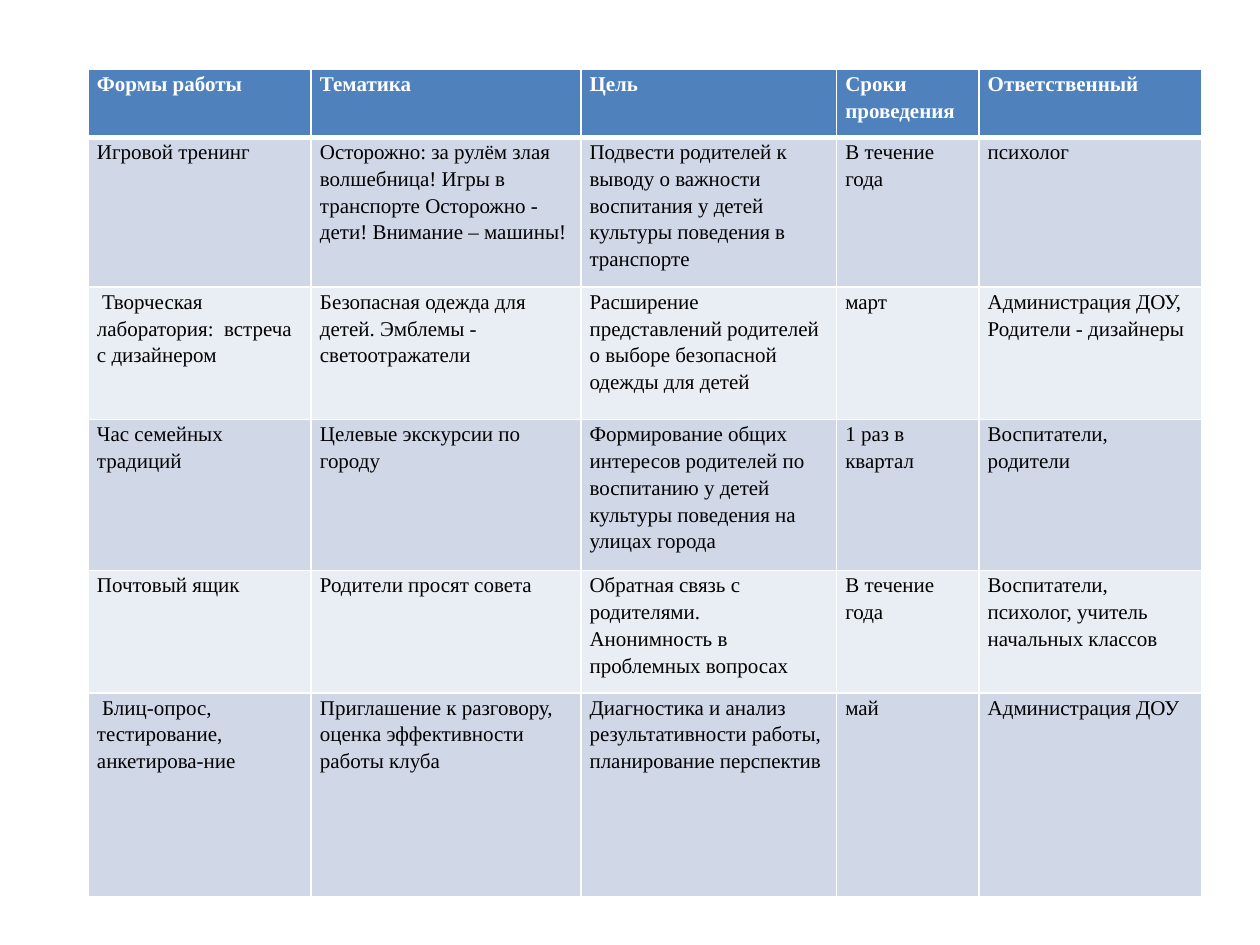
from dataclasses import dataclass

from lxml import etree
from pptx import Presentation
from pptx.dml.color import RGBColor
from pptx.oxml.ns import qn
from pptx.util import Inches, Pt

BLANK = 6


@dataclass(frozen=True)
class Theme:
    font: str = "Times New Roman"
    size: float = 12
    lead: float = 1.15
    head: str = "4F81BD"
    bands: tuple = ("D0D8E8", "E9EDF4")
    light: str = "FFFFFF"
    dark: str = "000000"
    thin: float = 1
    thick: float = 3


@dataclass(frozen=True)
class Row:
    share: float  # percent of slide height
    texts: tuple


THEME = Theme()
WIDE, HIGH = Inches(10), Inches(7.5)
LEFT, TOP = 7, 7.33  # percent of slide size
COLS = (17.7, 21.4, 20.3, 11.3, 17.7)  # percent of slide width

ROWS = (
    Row(7.2, ("Формы работы", "Тематика", "Цель", "Сроки проведения",
              "Ответственный")),
    Row(15.87, (
        "Игровой тренинг",
        "Осторожно: за рулём злая волшебница! Игры в транспорте "
        "Осторожно - дети! Внимание – машины!",
        "Подвести родителей к выводу о важности воспитания у детей "
        "культуры поведения в транспорте",
        "В течение года",
        "психолог")),
    Row(14, (
        " Творческая лаборатория:  встреча с дизайнером",
        "Безопасная одежда для детей. Эмблемы - светоотражатели",
        "Расширение представлений родителей о выборе безопасной одежды "
        "для детей",
        "март",
        "Администрация ДОУ, Родители - дизайнеры")),
    Row(16, (
        "Час семейных традиций",
        "Целевые экскурсии по городу",
        "Формирование общих интересов родителей по воспитанию у детей "
        "культуры поведения на улицах города",
        "1 раз в квартал",
        "Воспитатели, родители")),
    Row(12.93, (
        "Почтовый ящик",
        "Родители просят совета",
        "Обратная связь с родителями. Анонимность в проблемных вопросах",
        "В течение года",
        "Воспитатели, психолог, учитель начальных классов")),
    Row(21.6, (
        " Блиц-опрос, тестирование, анкетирова-ние",
        "Приглашение к разговору, оценка эффективности работы клуба",
        "Диагностика и анализ результативности работы, планирование "
        "перспектив",
        "май",
        "Администрация ДОУ")),
)


def part(whole: int, share: float) -> int:
    return round(whole * share / 100)


def edge(cell, side: str, width: float) -> None:
    props = cell._tc.get_or_add_tcPr()
    line = etree.SubElement(props, qn(f"a:ln{side}"), w=str(Pt(width)))
    fill = etree.SubElement(line, qn("a:solidFill"))
    etree.SubElement(fill, qn("a:srgbClr"), val=THEME.light)


def draw_cell(cell, text: str, row: int) -> None:
    head = row == 0
    # Borders: the rule under the header is thick
    heavy = {"B": 0, "T": 1}
    for side in "LRTB":
        edge(cell, side, THEME.thick if heavy.get(side) == row else THEME.thin)

    # Fill and insets
    cell.fill.solid()
    tint = THEME.head if head else THEME.bands[(row - 1) % 2]
    cell.fill.fore_color.rgb = RGBColor.from_string(tint)
    insets = {"margin_left": Inches(0.07), "margin_right": Inches(0.07),
              "margin_top": 0, "margin_bottom": 0}
    for name, value in insets.items():
        setattr(cell, name, value)

    # Text
    para = cell.text_frame.paragraphs[0]
    para.line_spacing = THEME.lead
    run = para.add_run()
    run.text = text
    looks = {"name": THEME.font, "size": Pt(THEME.size), "bold": head}
    for name, value in looks.items():
        setattr(run.font, name, value)
    ink = THEME.light if head else THEME.dark
    run.font.color.rgb = RGBColor.from_string(ink)


def draw_plan(slide) -> None:
    total = sum(row.share for row in ROWS)
    frame = slide.shapes.add_table(
        len(ROWS), len(COLS), part(WIDE, LEFT), part(HIGH, TOP),
        part(WIDE, sum(COLS)), part(HIGH, total))
    table = frame.table
    for col, share in zip(table.columns, COLS):
        col.width = part(WIDE, share)
    for i, row in enumerate(ROWS):
        table.rows[i].height = part(HIGH, row.share)
        for j, text in enumerate(row.texts):
            draw_cell(table.cell(i, j), text, i)


def main() -> None:
    deck = Presentation()
    deck.slide_width, deck.slide_height = WIDE, HIGH
    draw_plan(deck.slides.add_slide(deck.slide_layouts[BLANK]))
    deck.save("out.pptx")


if __name__ == "__main__":
    main()
